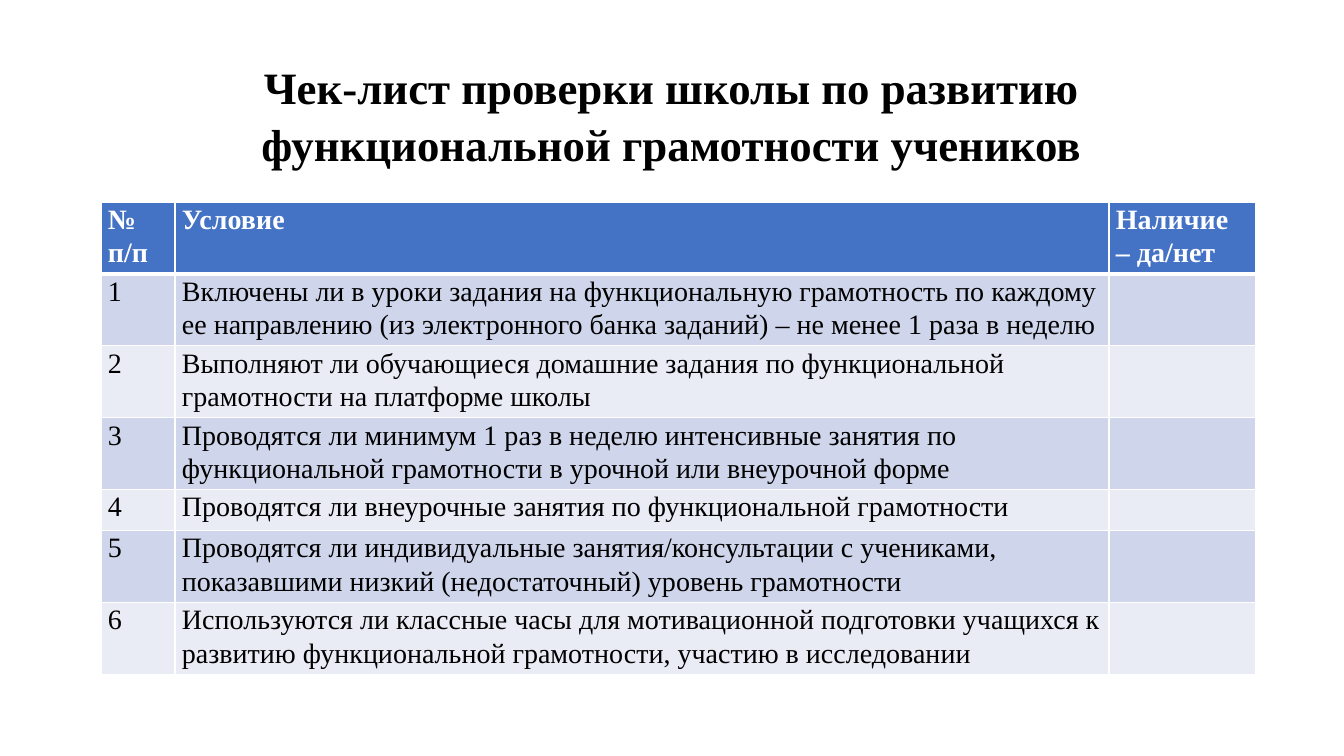
from dataclasses import dataclass

from lxml.etree import SubElement
from pptx import Presentation
from pptx.dml.color import RGBColor
from pptx.enum.text import MSO_ANCHOR, PP_ALIGN
from pptx.oxml.ns import qn
from pptx.slide import Slide
from pptx.table import _Cell
from pptx.text.text import _Paragraph
from pptx.util import Emu, Pt

EMU_PER_PX = 12192000 / 1344


@dataclass(frozen=True)
class Theme:
    font: str = "Times New Roman"
    title_size: int = 32
    table_size: int = 20
    line_spacing: float = 1.07
    ink: str = "000000"
    white: str = "FFFFFF"
    header: str = "4472C4"
    bands: tuple[str, str] = ("CFD5EA", "E9EBF5")


@dataclass(frozen=True)
class Box:
    left: int
    top: int
    width: int
    height: int


@dataclass(frozen=True)
class CellStyle:
    fill: str
    ink: str
    bold: bool
    bottom_border: int


THEME = Theme()
TITLE = "Чек-лист проверки школы по развитию функциональной грамотности учеников"
TITLE_BOX = Box(92, 40, 1159, 146)
TABLE_LEFT, TABLE_TOP, ROW_HEIGHT = 101, 202, 41
COLUMN_WIDTHS = (74, 934, 147)
CELL_MARGIN = 7
HEADINGS = ("№ п/п", "Условие", "Наличие – да/нет")
CONDITIONS = (
    "Включены ли в уроки задания на функциональную грамотность по каждому ее "
    "направлению (из электронного банка заданий) – не менее 1 раза в неделю",
    "Выполняют ли обучающиеся домашние задания по функциональной грамотности "
    "на платформе школы",
    "Проводятся ли минимум 1 раз в неделю интенсивные занятия по функциональной "
    "грамотности в урочной или внеурочной форме",
    "Проводятся ли внеурочные занятия по функциональной грамотности",
    "Проводятся ли индивидуальные занятия/консультации с учениками, показавшими "
    "низкий (недостаточный) уровень грамотности",
    "Используются ли классные часы для мотивационной подготовки учащихся к "
    "развитию функциональной грамотности, участию в исследовании",
)


def px(length: int) -> Emu:
    return Emu(round(length * EMU_PER_PX))


def write(paragraph: _Paragraph, text: str, size: int, ink: str, bold: bool) -> None:
    paragraph.text = text
    paragraph.line_spacing = THEME.line_spacing
    font = paragraph.font
    font.name = THEME.font
    font.size = Pt(size)
    font.bold = bold
    font.color.rgb = RGBColor.from_string(ink)


def add_title(slide: Slide) -> None:
    box = TITLE_BOX
    title = slide.shapes.add_textbox(
        px(box.left), px(box.top), px(box.width), px(box.height)
    )
    frame = title.text_frame
    frame.word_wrap = True
    frame.vertical_anchor = MSO_ANCHOR.MIDDLE
    heading = frame.paragraphs[0]
    write(heading, TITLE, THEME.title_size, THEME.ink, True)
    heading.alignment = PP_ALIGN.CENTER
    heading.space_after = Pt(8)


def add_borders(cell: _Cell, bottom_border: int) -> None:
    properties = cell._tc.get_or_add_tcPr()
    for side, width in (("L", 1), ("R", 1), ("T", 1), ("B", bottom_border)):
        line = SubElement(properties, qn(f"a:ln{side}"), w=str(Pt(width)))
        fill = SubElement(line, qn("a:solidFill"))
        SubElement(fill, qn("a:srgbClr"), val=THEME.white)


def fill_cell(cell: _Cell, text: str, style: CellStyle) -> None:
    add_borders(cell, style.bottom_border)
    cell.fill.solid()
    cell.fill.fore_color.rgb = RGBColor.from_string(style.fill)
    if text:
        cell.margin_left = cell.margin_right = px(CELL_MARGIN)
        cell.margin_top = cell.margin_bottom = 0
        write(
            cell.text_frame.paragraphs[0],
            text,
            THEME.table_size,
            style.ink,
            style.bold,
        )


def add_checklist(slide: Slide) -> None:
    rows = [HEADINGS]
    rows += [(str(number), text, "") for number, text in enumerate(CONDITIONS, 1)]
    header_style = CellStyle(THEME.header, THEME.white, True, 3)
    band_styles = [CellStyle(band, THEME.ink, False, 1) for band in THEME.bands]

    checklist = slide.shapes.add_table(
        len(rows),
        len(COLUMN_WIDTHS),
        px(TABLE_LEFT),
        px(TABLE_TOP),
        px(sum(COLUMN_WIDTHS)),
        px(ROW_HEIGHT * len(rows)),
    ).table
    for column, width in zip(checklist.columns, COLUMN_WIDTHS):
        column.width = px(width)
    for row_index, row in enumerate(rows):
        style = band_styles[(row_index - 1) % 2] if row_index else header_style
        for column_index, text in enumerate(row):
            fill_cell(checklist.cell(row_index, column_index), text, style)


def main() -> None:
    presentation = Presentation()
    presentation.slide_width = px(1344)
    presentation.slide_height = px(756)
    slide = presentation.slides.add_slide(presentation.slide_layouts[6])
    add_title(slide)
    add_checklist(slide)
    presentation.save("out.pptx")


if __name__ == "__main__":
    main()
